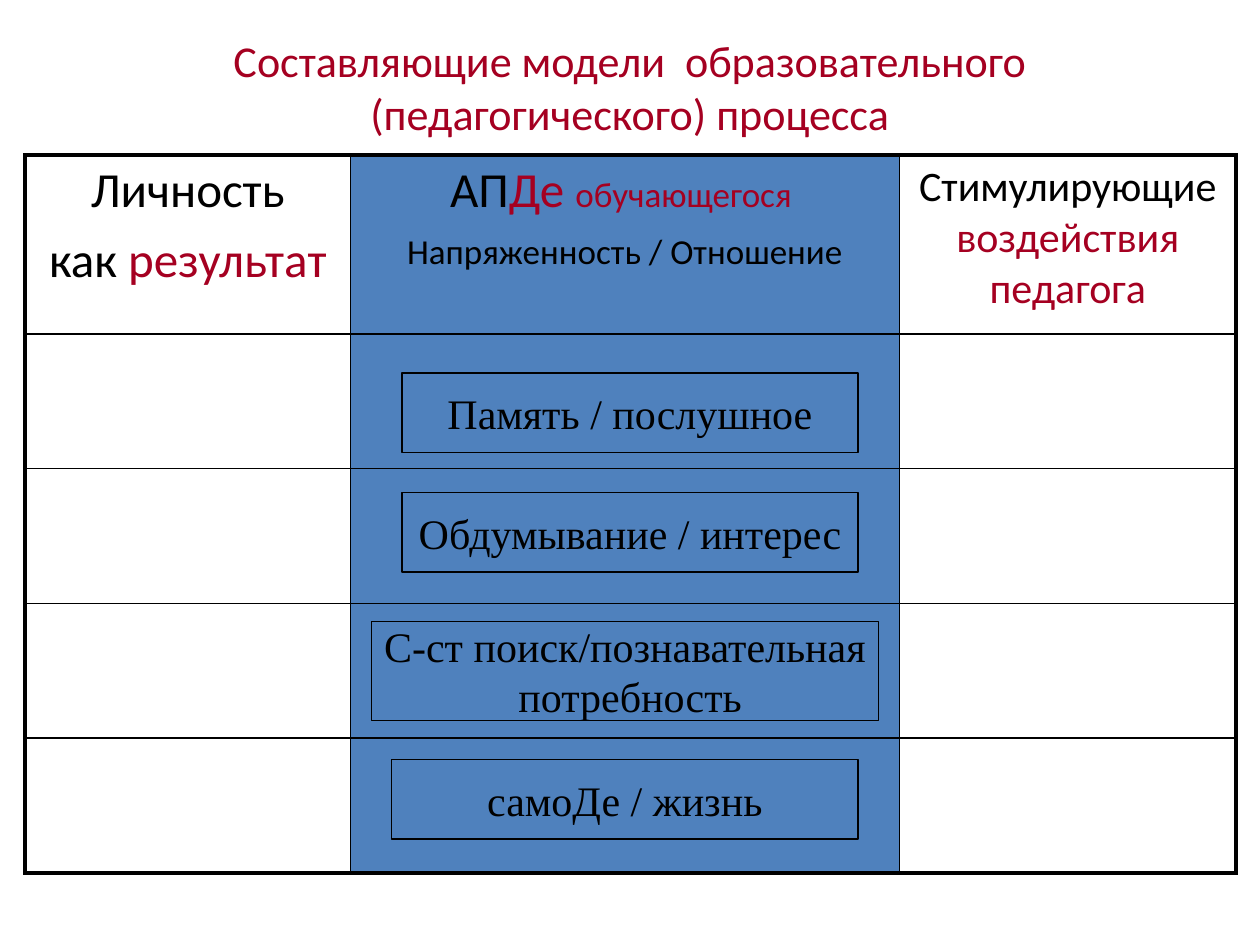
import pptx
import pptx.enum.shapes
import pptx.enum.text
import pptx.oxml.ns
import pptx.util
from lxml import etree
from pptx.dml.color import RGBColor
from pptx.util import Inches, Pt

COLORS = {"black": "000000", "red": "A50021", "blue": "4F81BD"}
MIDDLE = pptx.enum.text.MSO_ANCHOR.MIDDLE


def write_text(tf, paragraphs, size=24, font="Calibri", color="black", before=0):
    """Fill a frame with centred paragraphs, each a list of (text, overrides) runs."""
    for i, runs in enumerate(paragraphs):
        p = tf.paragraphs[0] if i == 0 else tf.add_paragraph()
        p.alignment = pptx.enum.text.PP_ALIGN.CENTER
        p.space_before = Pt(before)
        for text, fmt in runs:
            r = p.add_run()
            r.text = text
            r.font.name = font
            r.font.size = Pt(fmt.get("size", size))
            r.font.color.rgb = RGBColor.from_string(COLORS[fmt.get("color", color)])


def add_border(cell, side, width):
    tc_pr = cell._tc.get_or_add_tcPr()
    ln = etree.SubElement(tc_pr, pptx.oxml.ns.qn(f"a:ln{side}"), w=str(Pt(width)))
    fill = etree.SubElement(ln, pptx.oxml.ns.qn("a:solidFill"))
    etree.SubElement(fill, pptx.oxml.ns.qn("a:srgbClr"), val=COLORS["black"])


prs = pptx.Presentation()
prs.slide_width, prs.slide_height = Inches(10), Inches(7.5)
s = prs.slides.add_slide(prs.slide_layouts[6])

# Title
title = s.shapes.add_textbox(Inches(0.5), Inches(0.3), Inches(9), Inches(0.77))
tf = title.text_frame
tf.word_wrap = True
tf.vertical_anchor = MIDDLE
write_text(tf, [[("Составляющие модели  образовательного (педагогического) процесса", {})]],
           size=25.2, color="red")

# Table: headings above four empty levels, middle column blue
col_widths = [2.58, 4.36, 2.67]
row_heights = [1.42] + [1.07] * 4
n_rows, n_cols = len(row_heights), len(col_widths)
frame = s.shapes.add_table(n_rows, n_cols, Inches(0.2), Inches(1.23),
                           Inches(sum(col_widths)), Inches(sum(row_heights)))
table = frame.table
table.first_row = table.horz_banding = False
for column, width in zip(table.columns, col_widths):
    column.width = Inches(width)
for row, height in zip(table.rows, row_heights):
    row.height = Inches(height)

for row in range(n_rows):
    for col in range(n_cols):
        cell = table.cell(row, col)
        outer = {"L": col == 0, "R": col == n_cols - 1,
                 "T": row == 0, "B": row == n_rows - 1}
        for side, is_outer in outer.items():
            add_border(cell, side, 2.25 if is_outer else 1)
        if col == 1:
            cell.fill.solid()
            cell.fill.fore_color.rgb = RGBColor.from_string(COLORS["blue"])
        else:
            cell.fill.background()

red = {"color": "red"}
headings = [
    (28, 5.6, [[("Личность", {})], [("как ", {}), ("результат", red)]]),
    (28, 5.6, [[("АП", {}), ("Де ", red), ("обучающегося ", {"size": 20, "color": "red"})],
               [("Напряженность / Отношение", {"size": 20})]]),
    (24, 4.8, [[("Стимулирующие ", {}), ("воздействия педагога", red)]]),
]
for col, (size, before, paragraphs) in enumerate(headings):
    write_text(table.cell(0, col).text_frame, paragraphs, size=size, before=before)

# Activity / attitude boxes, one per level
boxes = [
    (3.19, 2.96, 3.62, 0.63, ["Память / послушное"]),
    (3.19, 3.91, 3.62, 0.63, ["Обдумывание / интерес"]),
    (2.95, 4.93, 4.02, 0.79, ["С-ст поиск/познавательная", " потребность"]),
    (3.11, 6.03, 3.7, 0.63, ["самоДе / жизнь"]),
]
for left, top, width, height, lines in boxes:
    sp = s.shapes.add_shape(pptx.enum.shapes.MSO_SHAPE.RECTANGLE, Inches(left),
                            Inches(top), Inches(width), Inches(height))
    sp.shadow.inherit = False
    sp.fill.solid()
    sp.fill.fore_color.rgb = RGBColor.from_string(COLORS["blue"])
    sp.line.color.rgb = RGBColor.from_string(COLORS["black"])
    sp.line.width = Pt(0.75)
    tf = sp.text_frame
    tf.word_wrap = False
    tf.vertical_anchor = MIDDLE
    write_text(tf, [[(line, {})] for line in lines], font="Times New Roman")

prs.save("out.pptx")
